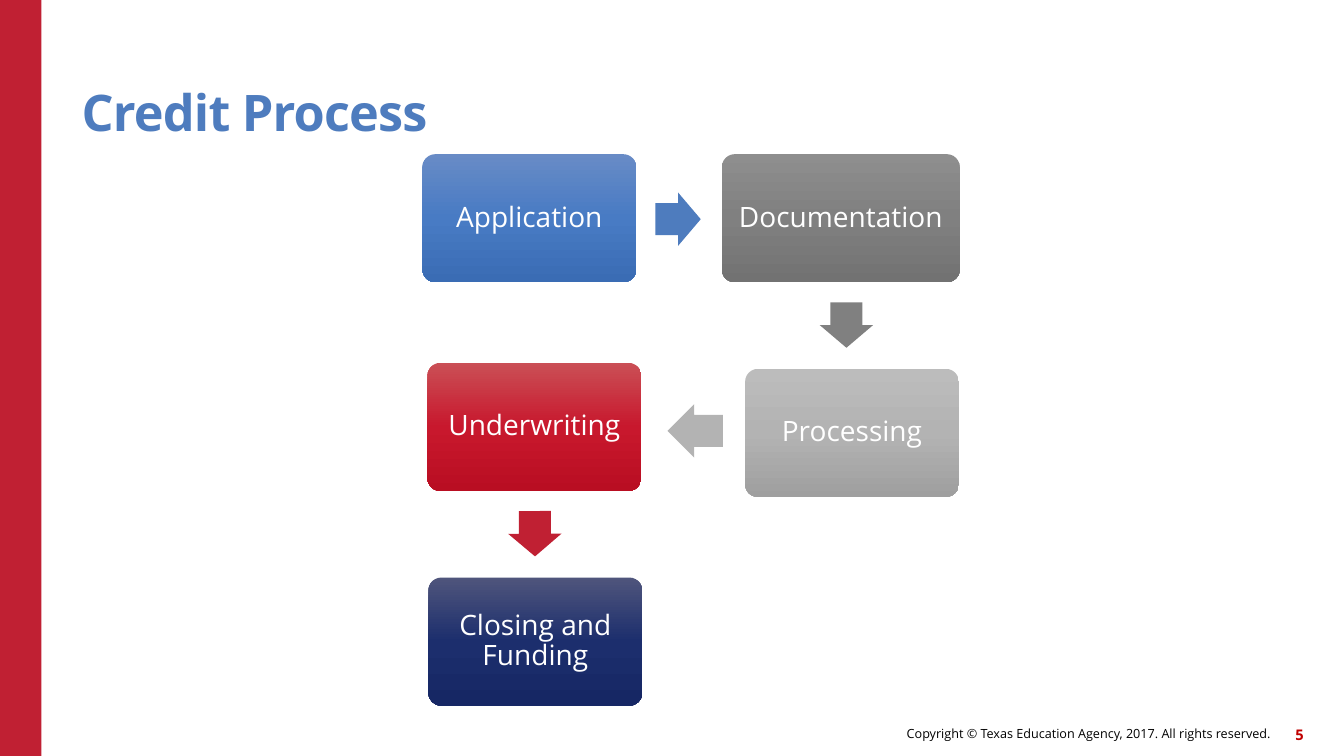
"""Build the Credit Process slide: five steps joined by block arrows."""
from copy import deepcopy
from dataclasses import dataclass

from pptx import Presentation
from pptx.dml.color import RGBColor
from pptx.enum.shapes import MSO_SHAPE
from pptx.enum.text import MSO_ANCHOR, PP_ALIGN
from pptx.util import Inches, Pt


@dataclass(frozen=True)
class Theme:
    font: str = "Open Sans"
    title_size: float = 36
    step_size: float = 20
    copyright_size: float = 9
    number_size: float = 10.5
    blue: str = "4E7CBE"
    gray: str = "808080"
    silver: str = "B3B3B3"
    red: str = "C02033"
    number_red: str = "C00000"
    black: str = "000000"
    white: str = "FFFFFF"
    blue_fade: tuple = ("688BC6", "487BC4", "3A6CB4")
    gray_fade: tuple = ("8E8E8E", "808080", "727272")
    silver_fade: tuple = ("BCBCBC", "B3B3B3", "9F9F9F")
    red_fade: tuple = ("CA4F56", "C8182D", "B90E22")
    navy_fade: tuple = ("4F557C", "1C2E6D", "162764")


def add_block(page, kind, bounds, color=None):
    """Add a shape without outline or shadow, solid when a color is given."""
    block = page.shapes.add_shape(kind, *map(Inches, bounds))
    block.shadow.inherit = False
    block.line.fill.background()
    if color:
        block.fill.solid()
        block.fill.fore_color.rgb = RGBColor.from_string(color)
    return block


def write_text(box, text, size, color, align, anchor=MSO_ANCHOR.MIDDLE, bold=False, margin=0):
    """Write one styled paragraph into a box and return it."""
    frame = box.text_frame
    frame.word_wrap = True
    frame.vertical_anchor = anchor
    frame.margin_left = frame.margin_right = Inches(margin)
    frame.margin_top = frame.margin_bottom = Inches(margin)
    para = frame.paragraphs[0]
    para.alignment = align
    para.add_run().text = text
    para.font.name = theme.font
    para.font.size = Pt(size)
    para.font.bold = bold
    para.font.color.rgb = RGBColor.from_string(color)
    return para


theme = Theme()
deck = Presentation()
deck.slide_width = Inches(13.33)
deck.slide_height = Inches(7.5)
page = deck.slides.add_slide(deck.slide_layouts[6])

add_block(page, MSO_SHAPE.RECTANGLE, (0, 0, 0.41, 7.5), theme.red)

copyright_box = page.shapes.add_textbox(Inches(6.14), Inches(7.12), Inches(6.46), Inches(0.32))
write_text(copyright_box, "Copyright © Texas Education Agency, 2017. All rights reserved.",
           theme.copyright_size, theme.black, PP_ALIGN.RIGHT)

number_box = page.shapes.add_textbox(Inches(12.51), Inches(7.13), Inches(0.42), Inches(0.32))
write_text(number_box, "5", theme.number_size, theme.number_red, PP_ALIGN.RIGHT, bold=True)

title_box = page.shapes.add_textbox(Inches(0.81), Inches(0.45), Inches(11), Inches(0.96))
title = write_text(title_box, "Credit Process", theme.title_size, theme.blue,
                   PP_ALIGN.LEFT, MSO_ANCHOR.BOTTOM, bold=True)
title.line_spacing = 0.9
title.runs[0]._r.get_or_add_rPr().set("spc", "-60")

steps = [
    ("Application", 4.19, 1.53, 2.12, theme.blue_fade),
    ("Documentation", 7.16, 1.53, 2.36, theme.gray_fade),
    ("Processing", 7.39, 3.66, 2.12, theme.silver_fade),
    ("Underwriting", 4.24, 3.6, 2.12, theme.red_fade),
    ("Closing and Funding", 4.25, 5.73, 2.12, theme.navy_fade),
]
for name, left, top, width, fade in steps:
    step = add_block(page, MSO_SHAPE.ROUNDED_RECTANGLE, (left, top, width, 1.27))
    step.adjustments[0] = 0.1
    step.fill.gradient()
    step.fill.gradient_angle = 270
    first_stop = step.fill._xPr.gradFill.gsLst[0]
    first_stop.addnext(deepcopy(first_stop))
    for stop, color, position in zip(step.fill.gradient_stops, fade, (0, 0.5, 1)):
        stop.color.rgb = RGBColor.from_string(color)
        stop.position = position
    label = write_text(step, name, theme.step_size, theme.white, PP_ALIGN.CENTER, margin=0.08)
    label.line_spacing = 0.9

arrows = [
    (6.5, 1.91, 0.45, 0, theme.blue),
    (8.17, 2.96, 0.45, 90, theme.gray),
    (6.62, 4.01, 0.55, 180, theme.silver),
    (5.08, 5.03, 0.45, 89.7, theme.red),
]
for left, top, width, rotation, color in arrows:
    arrow = add_block(page, MSO_SHAPE.RIGHT_ARROW, (left, top, width, 0.53), color)
    arrow.adjustments[0] = 0.6
    arrow.adjustments[1] = 0.5
    arrow.rotation = rotation

deck.save("out.pptx")
